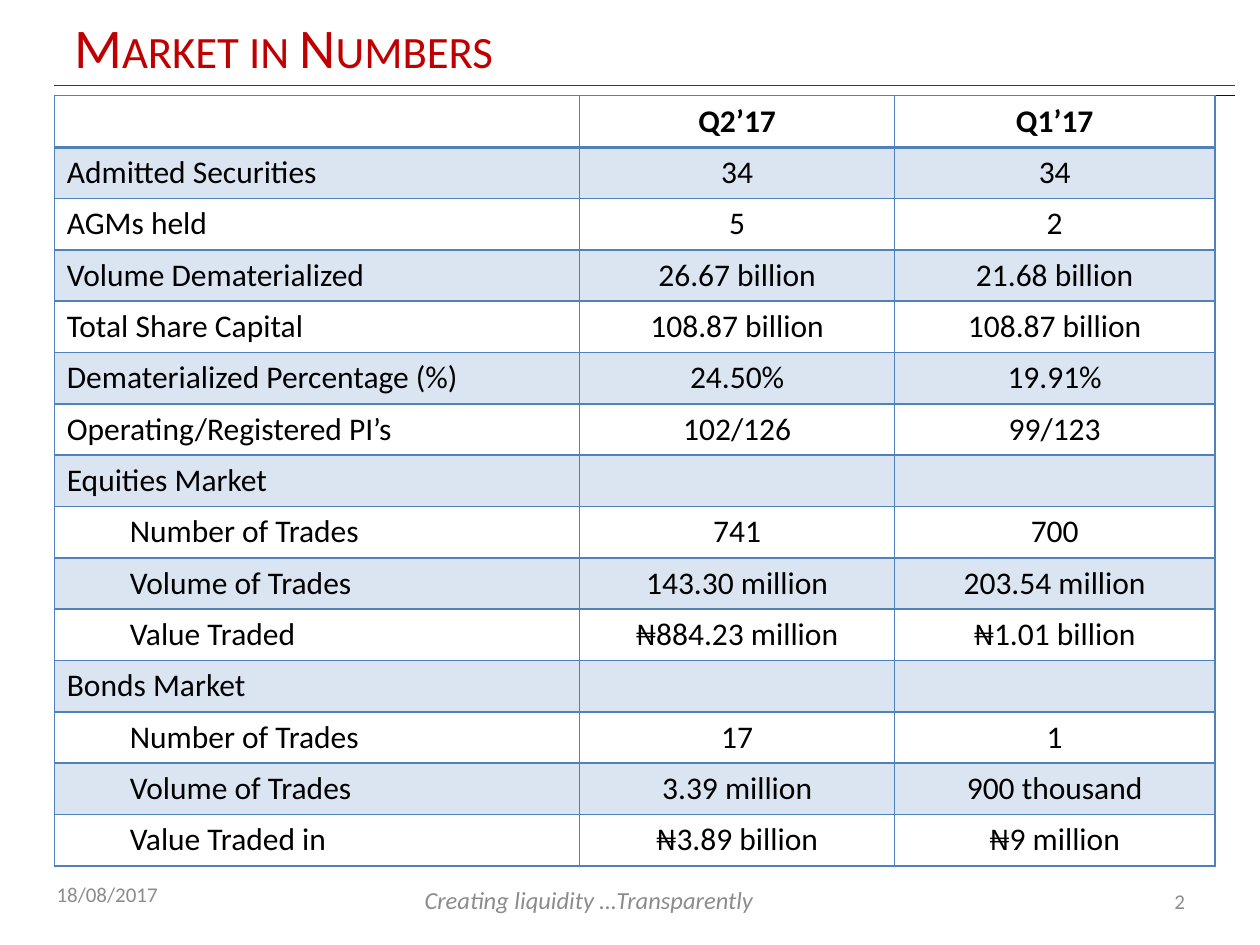
from lxml import etree
from pptx import Presentation, util as u
from pptx.dml.color import RGBColor
from pptx.enum import shapes, text
from pptx.oxml import ns

RED = RGBColor(0xC0, 0x00, 0x00)
NAVY = RGBColor(0x0A, 0x05, 0x71)
BLUE = RGBColor(0x4F, 0x81, 0xBD)
GREY = RGBColor(0x8C, 0x8C, 0x8C)
BLACK = RGBColor(0x00, 0x00, 0x00)

LEFT = text.PP_ALIGN.LEFT
CENTER = text.PP_ALIGN.CENTER
RIGHT = text.PP_ALIGN.RIGHT
TOP = text.MSO_ANCHOR.TOP
MIDDLE = text.MSO_ANCHOR.MIDDLE

COLUMN_WIDTHS = (300.25, 180, 182.9)
ROW_HEIGHT = 29.35
INDENT = 36
MARKET_ROWS = (
    ("", "Q2’17", "Q1’17"),
    ("Admitted Securities", "34", "34"),
    ("AGMs held", "5", "2"),
    ("Volume Dematerialized", "26.67 billion", "21.68 billion"),
    ("Total Share Capital", "108.87 billion", "108.87 billion"),
    ("Dematerialized Percentage (%)", "24.50%", "19.91%"),
    ("Operating/Registered PI’s", "102/126", "99/123"),
    ("Equities Market", "", ""),
    ("Number of Trades", "741", "700"),
    ("Volume of Trades", "143.30 million", "203.54 million"),
    ("Value Traded", "₦884.23 million", "₦1.01 billion"),
    ("Bonds Market", "", ""),
    ("Number of Trades", "17", "1"),
    ("Volume of Trades", "3.39 million", "900 thousand"),
    ("Value Traded in", "₦3.89 billion", "₦9 million"),
)
SUB_ROWS = {8, 9, 10, 12, 13, 14}


class MarketSlide:
    """Holds the style and the current slide, and draws each kind of element."""

    font_name = "Calibri"

    def __init__(self, page):
        self.page = page

    def add_words(self, para, words, color, align=LEFT, small_caps=False, **formats):
        para.alignment = align
        if not words:
            return
        span = para.add_run()
        span.text = words
        span.font.color.rgb = color
        for name, value in {"name": self.font_name, **formats}.items():
            setattr(span.font, name, value)
        if small_caps:
            span.font._element.set("cap", "small")

    def rule(self, y, color):
        line = self.page.shapes.add_connector(
            shapes.MSO_CONNECTOR.STRAIGHT, u.Pt(31), u.Pt(y), u.Pt(705.6), u.Pt(y))
        line.line.color.rgb = color
        line.line.width = u.Pt(0.75)
        etree.SubElement(line._element.spPr, ns.qn("a:effectLst"))

    def label(self, bounds, words, color, anchor=MIDDLE, **formats):
        box = self.page.shapes.add_textbox(*map(u.Pt, bounds))
        frame = box.text_frame
        frame.word_wrap = True
        frame.vertical_anchor = anchor
        self.add_words(frame.paragraphs[0], words, color, **formats)

    def border(self, cell, side, width):
        properties = cell._tc.get_or_add_tcPr()
        edge = etree.SubElement(properties, ns.qn(f"a:ln{side}"), w=str(u.Pt(width)))
        fill = etree.SubElement(edge, ns.qn("a:solidFill"))
        etree.SubElement(fill, ns.qn("a:srgbClr"), val=str(BLUE))

    def shade(self, cell, banded):
        if not banded:
            cell.fill.background()
            return
        cell.fill.solid()
        cell.fill.fore_color.rgb = BLUE
        tint = cell._tc.tcPr.find(ns.qn("a:solidFill")).find(ns.qn("a:srgbClr"))
        etree.SubElement(tint, ns.qn("a:alpha"), val="20000")

    def cell(self, cell, row, column, words):
        header = row == 0
        for side in "LRTB":
            thick = (side == "B" and header) or (side == "T" and row == 1)
            self.border(cell, side, 2 if thick else 1)
        self.shade(cell, row % 2 == 1)
        para = cell.text_frame.paragraphs[0]
        if column and not header:
            cell.vertical_anchor = MIDDLE
            for side in ("left", "right", "top", "bottom"):
                setattr(cell, f"margin_{side}", 0)
        elif row in SUB_ROWS:
            para._p.get_or_add_pPr().set("marL", str(u.Pt(INDENT)))
        self.add_words(para, words, BLACK, align=CENTER if column else LEFT,
                       size=u.Pt(18), bold=header)

    def table(self, left, top, rows, widths, row_height):
        table = self.page.shapes.add_table(
            len(rows), len(widths), u.Pt(left), u.Pt(top),
            u.Pt(sum(widths)), u.Pt(row_height * len(rows))).table
        table.first_row = table.horz_banding = False
        for column, width in zip(table.columns, widths):
            column.width = u.Pt(width)
        for row, values in enumerate(rows):
            table.rows[row].height = u.Pt(row_height)
            for column, words in enumerate(values):
                self.cell(table.cell(row, column), row, column, words)


def main():
    deck = Presentation()
    deck.slide_width, deck.slide_height = u.Pt(720), u.Pt(540)
    slide = MarketSlide(deck.slides.add_slide(deck.slide_layouts[6]))
    slide.rule(54.7, NAVY)
    slide.rule(49, RED)
    slide.label((235.5, 502, 228, 28.8), "Creating liquidity …Transparently", GREY,
                anchor=TOP, size=u.Pt(14), italic=True)
    slide.label((25.2, 496.8, 168, 28.8), "18/08/2017", GREY, size=u.Pt(12))
    slide.label((35.3, 4.3, 573, 44), "Market in Numbers", RED,
                size=u.Pt(32), small_caps=True)
    slide.label((516.2, 500.4, 168, 28.8), "2", GREY, align=RIGHT, size=u.Pt(12))
    slide.table(31, 54.7, MARKET_ROWS, COLUMN_WIDTHS, ROW_HEIGHT)
    deck.save("out.pptx")


if __name__ == "__main__":
    main()
